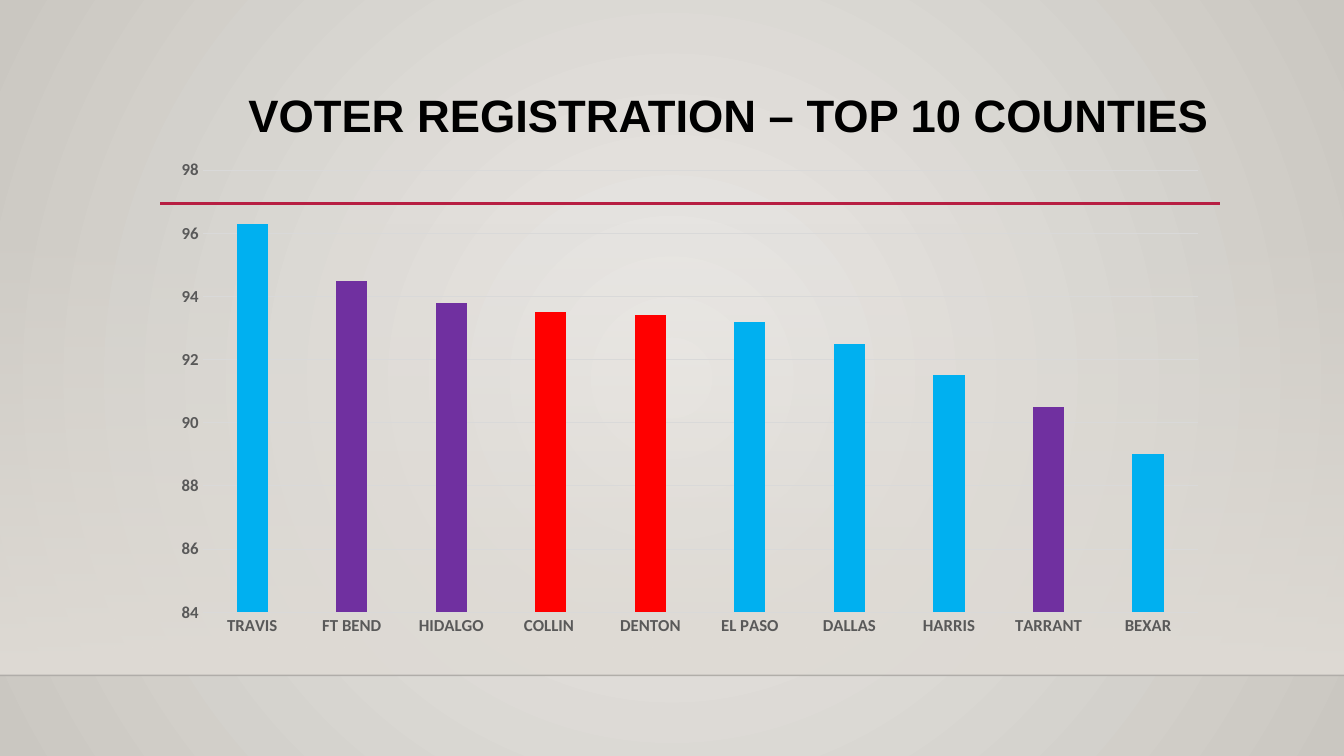
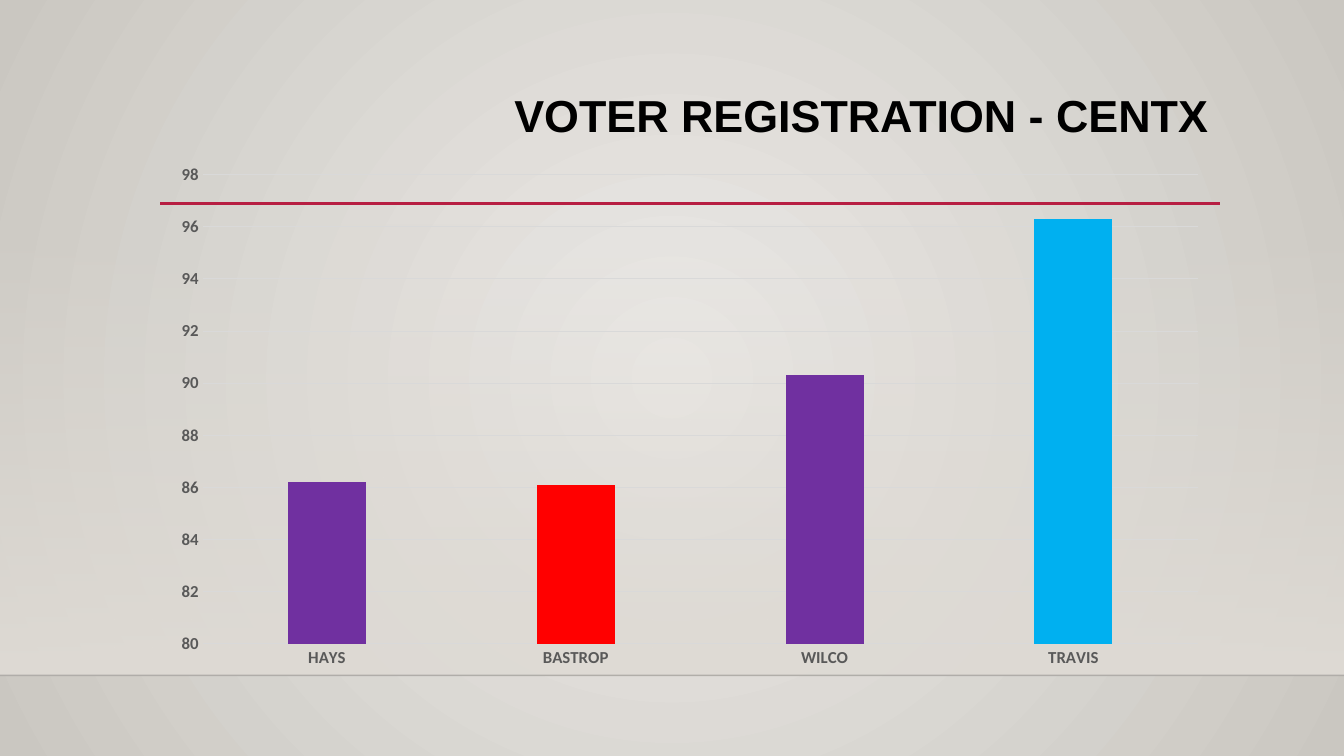
import pptx
import pptx.util
import pptx.chart.data
import pptx.dml.color
import pptx.enum.chart
import pptx.enum.shapes
import pptx.enum.text
import pptx.oxml
import pptx.oxml.ns
from lxml import etree

Inches, Pt = pptx.util.Inches, pptx.util.Pt
RGB = pptx.dml.color.RGBColor
qn = pptx.oxml.ns.qn

# Colours
BLUE = RGB(0x00, 0xB0, 0xF0)
PURPLE = RGB(0x70, 0x30, 0xA0)
RED = RGB(0xFF, 0x00, 0x00)
BLACK = RGB(0x00, 0x00, 0x00)
EDGE = RGB(0x00, 0x00, 0x01)
GRAY = RGB(0x59, 0x59, 0x59)
GRID = RGB(0xD9, 0xD9, 0xD9)
RULE = RGB(0xB7, 0x1E, 0x42)
BAND = RGB(0xDF, 0xDB, 0xD5)
LIGHT = RGB(0xEC, 0xEA, 0xE7)
DARK = RGB(0xCA, 0xC7, 0xC1)

# Layout in inches
WIDE, HIGH = 13.33, 7.5
LEFT, SPAN = 1.59, 10.5
FLOOR = 6.7

# Content: county, percent registered, bar colour
SLIDES = [
    dict(title="VOTER REGISTRATION – TOP 10 COUNTIES", size=32.4,
         top=1.49, height=4.92, low=84, high=98,
         bars=[("TRAVIS", 96.3, BLUE), ("FT BEND", 94.5, PURPLE),
               ("HIDALGO", 93.8, PURPLE), ("COLLIN ", 93.5, RED),
               ("DENTON", 93.4, RED), ("EL PASO", 93.2, BLUE),
               ("DALLAS", 92.5, BLUE), ("HARRIS", 91.5, BLUE),
               ("TARRANT", 90.5, PURPLE), ("BEXAR", 89, BLUE)]),
    dict(title="VOTER REGISTRATION - CENTX", size=32,
         top=1.53, height=5.2, low=80, high=98,
         bars=[("HAYS", 86.2, PURPLE), ("BASTROP", 86.1, RED),
               ("WILCO", 90.3, PURPLE), ("TRAVIS", 96.3, BLUE)]),
]


def fade(fill, first, last):
    fill.gradient()
    for stop, color in zip(fill.gradient_stops, (first, last)):
        stop.color.rgb = color


def set_alpha(color, percent):
    etree.SubElement(color, qn("a:alpha")).set("val", str(percent * 1000))


def add_line(slide, left, right, y, color, width):
    line = slide.shapes.add_connector(
        pptx.enum.shapes.MSO_CONNECTOR.STRAIGHT,
        Inches(left), Inches(y), Inches(right), Inches(y))
    line.line.color.rgb = color
    line.line.width = Pt(width)
    etree.SubElement(line._element.spPr, qn("a:effectLst"))
    return line


def style_master(master):
    # Radial background
    fill = master.background.fill
    fade(fill, LIGHT, DARK)
    grad = master._element.find(".//" + qn("p:bgPr") + "/" + qn("a:gradFill"))
    round_path = etree.Element(qn("a:path"), {"path": "circle"})
    etree.SubElement(round_path, qn("a:fillToRect"),
                     {side: "50000" for side in "ltrb"})
    grad.replace(grad.find(qn("a:lin")), round_path)


def add_decor(slide, master):
    # Band fading in from the top
    band = slide.shapes.add_shape(
        pptx.enum.shapes.MSO_SHAPE.RECTANGLE,
        0, Inches(2.21), Inches(WIDE), Inches(FLOOR - 2.21))
    band.shadow.inherit = False
    band.line.fill.background()
    fade(band.fill, BAND, BAND)
    band.fill.gradient_angle = 270
    set_alpha(band._element.find(".//" + qn("a:srgbClr")), 0)

    # Floor edge and title rule
    floor = add_line(slide, 0, WIDE, FLOOR, EDGE, 1)
    set_alpha(floor._element.find(".//" + qn("a:srgbClr")), 20)
    rule = add_line(slide, LEFT, 12.1, 2.02, RULE, 2.5)

    # Hand the parts to the master, behind its placeholders
    for i, part in enumerate((band, floor, rule)):
        node = part._element
        node.find(".//" + qn("p:cNvPr")).set("id", str(20 + i))
        master.shapes._spTree.insert(2 + i, node)


def style_layout(layout):
    title = layout.placeholders[0]
    title.left, title.top = Inches(LEFT), Inches(0.88)
    title.width, title.height = Inches(SPAN), Inches(1.15)


def set_title(slide, text, size):
    frame = slide.shapes.title.text_frame
    frame.text = text
    frame.word_wrap = True
    frame.vertical_anchor = pptx.enum.text.MSO_ANCHOR.TOP
    para = frame.paragraphs[0]
    para.alignment = pptx.enum.text.PP_ALIGN.RIGHT
    para.line_spacing = 0.9
    font = para.font
    font.name, font.size, font.bold = "Arial", Pt(size), True
    font.color.rgb = BLACK


def style_axis(axis):
    axis.major_tick_mark = pptx.enum.chart.XL_TICK_MARK.NONE
    axis.minor_tick_mark = pptx.enum.chart.XL_TICK_MARK.NONE
    font = axis.tick_labels.font
    font.name, font.size, font.bold = "Calibri", Pt(12), True
    font.color.rgb = GRAY


def set_line(line):
    line.color.rgb = GRID
    line.width = Pt(0.75)


def add_bars(slide, item):
    names, values, colors = zip(*item["bars"])
    data = pptx.chart.data.CategoryChartData(number_format="General")
    data.categories = names
    data.add_series("Series 1", values)
    chart = slide.shapes.add_chart(
        pptx.enum.chart.XL_CHART_TYPE.COLUMN_CLUSTERED,
        Inches(LEFT), Inches(item["top"]), Inches(SPAN),
        Inches(item["height"]), data).chart
    chart.has_title = chart.has_legend = False
    chart.font.name, chart.font.size = "Calibri", Pt(10)
    chart.font.color.rgb = BLACK

    # Axes
    cat, val = chart.category_axis, chart.value_axis
    style_axis(cat)
    style_axis(val)
    set_line(cat.format.line)
    val.format.line.fill.background()
    set_line(val.major_gridlines.format.line)
    val.minimum_scale, val.maximum_scale = item["low"], item["high"]
    val.major_unit = 2

    # Bars
    plot = chart.plots[0]
    plot.gap_width, plot.overlap = 219, -27
    plot.vary_by_categories = False
    series = plot.series[0]
    series.invert_if_negative = False
    for i, color in enumerate(colors):
        fill = series.points[i].format.fill
        fill.solid()
        fill.fore_color.rgb = color


def main():
    deck = pptx.Presentation()
    deck.slide_width, deck.slide_height = Inches(WIDE), Inches(HIGH)
    master, layout = deck.slide_master, deck.slide_layouts[5]
    style_master(master)
    style_layout(layout)
    for i, item in enumerate(SLIDES):
        slide = deck.slides.add_slide(layout)
        if i == 0:
            add_decor(slide, master)
        set_title(slide, item["title"], item["size"])
        add_bars(slide, item)
    deck.save("out.pptx")


if __name__ == "__main__":
    main()
